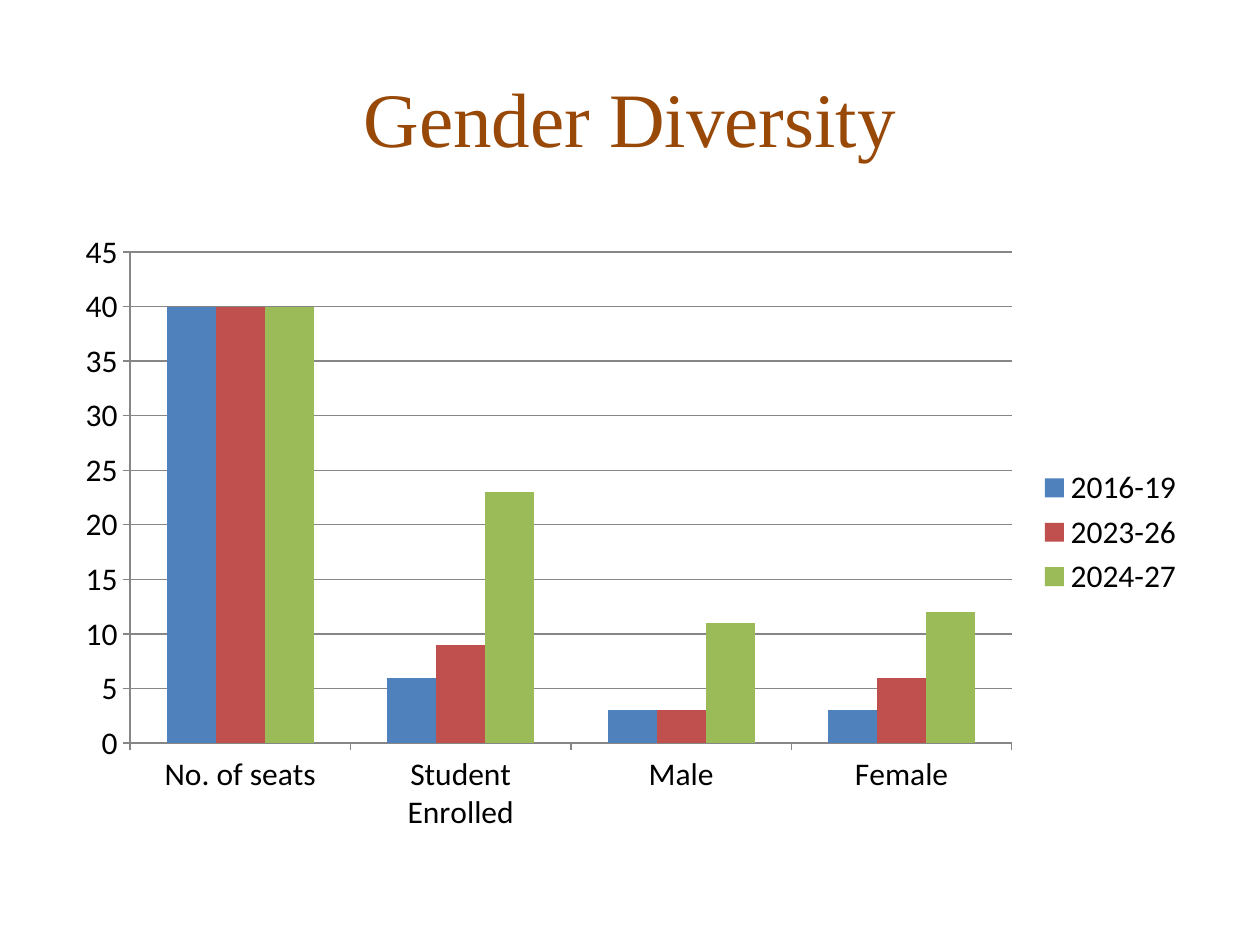
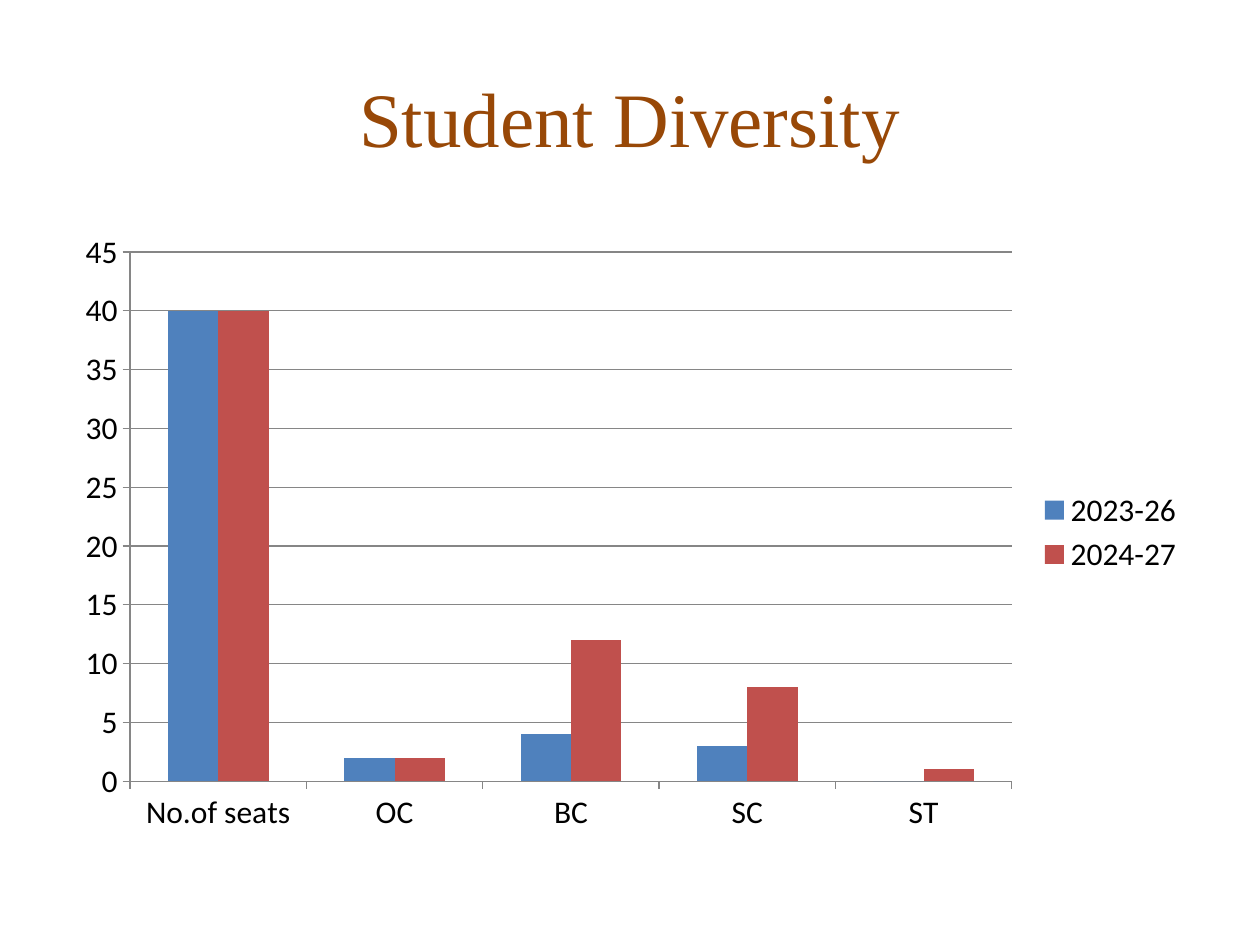
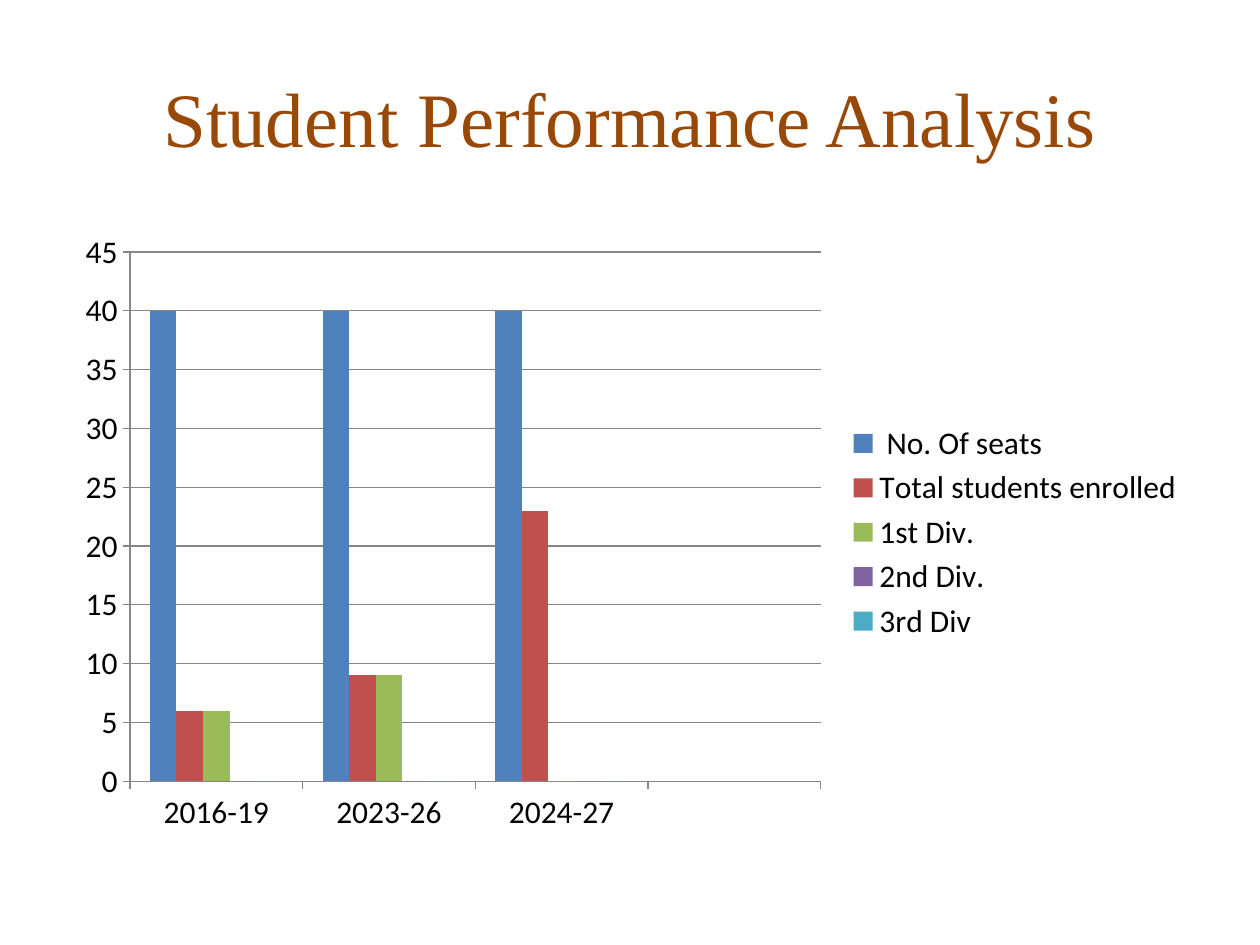
"""Build three slides of column charts on student diversity and performance."""
from dataclasses import dataclass

from pptx import Presentation
from pptx.chart.data import CategoryChartData
from pptx.dml.color import RGBColor
from pptx.enum.chart import XL_CHART_TYPE, XL_LEGEND_POSITION, XL_TICK_MARK
from pptx.enum.text import MSO_ANCHOR, PP_ALIGN
from pptx.util import Pt

CLUSTERED = XL_CHART_TYPE.COLUMN_CLUSTERED
LEGEND_RIGHT = XL_LEGEND_POSITION.RIGHT
TICK_OUTSIDE = XL_TICK_MARK.OUTSIDE
MIDDLE = MSO_ANCHOR.MIDDLE
CENTER = PP_ALIGN.CENTER

SLIDE_WIDTH, SLIDE_HEIGHT = 720, 540
MARGIN = 36
CONTENT_WIDTH = SLIDE_WIDTH - 2 * MARGIN
TITLE_TOP, TITLE_HEIGHT = 21.6, 90
CHART_TOP, CHART_HEIGHT = 126, 356.4


@dataclass(frozen=True)
class Theme:
    """Colours, fonts and type sizes of the slides."""
    background: str = "FFFFFF"
    title_color: str = "984807"
    title_font: str = "Times New Roman"
    title_size: float = 44
    chart_color: str = "000000"
    chart_font: str = "Calibri"
    chart_size: float = 18
    line_color: str = "868686"
    line_width: float = 0.75
    series_colors: tuple = ("4F81BD", "C0504D", "9BBB59", "8064A2", "4BACC6")


CHART_SLIDES = [
    ("Gender Diversity",
     ["No. of seats", "Student Enrolled", "Male", "Female"],
     {"2016-19": [40, 6, 3, 3],
      "2023-26": [40, 9, 3, 6],
      "2024-27": [40, 23, 11, 12]}),
    ("Student Diversity",
     ["No.of seats", "OC", "BC", "SC", "ST"],
     {"2023-26": [40, 2, 4, 3, 0],
      "2024-27": [40, 2, 12, 8, 1]}),
    ("Student Performance Analysis",
     ["2016-19", "2023-26", "2024-27", ""],
     {" No. Of seats": [40, 40, 40, None],
      "Total students enrolled": [6, 9, 23, None],
      "1st Div.": [6, 9, 0, None],
      "2nd Div.": [0, 0, 0, None],
      "3rd Div": [0, 0, 0, None]}),
]


class Deck:
    """Hold the style and the current slide, and draw its elements."""

    def __init__(self, theme):
        """Start an empty presentation of the right size."""
        self.theme = theme
        self.presentation = Presentation()
        self.presentation.slide_width = Pt(SLIDE_WIDTH)
        self.presentation.slide_height = Pt(SLIDE_HEIGHT)
        self.slide = None

    def add_slide(self):
        """Add a blank slide and make it the current one."""
        self.slide = self.presentation.slides.add_slide(self.presentation.slide_layouts[6])
        fill = self.slide.background.fill
        fill.solid()
        fill.fore_color.rgb = RGBColor.from_string(self.theme.background)

    def style_font(self, font, name, size, color):
        """Set the typeface, size and colour of a font."""
        font.name = name
        font.size = Pt(size)
        font.color.rgb = RGBColor.from_string(color)

    def add_title(self, text):
        """Add the centred title."""
        theme = self.theme
        shape = self.slide.shapes.add_textbox(
            Pt(MARGIN), Pt(TITLE_TOP), Pt(CONTENT_WIDTH), Pt(TITLE_HEIGHT))
        text_frame = shape.text_frame
        text_frame.word_wrap = True
        text_frame.vertical_anchor = MIDDLE
        text_frame.text = text
        paragraph = text_frame.paragraphs[0]
        paragraph.alignment = CENTER
        self.style_font(paragraph.runs[0].font, theme.title_font,
                        theme.title_size, theme.title_color)

    def style_line(self, line):
        """Give a chart line its colour and width."""
        line.color.rgb = RGBColor.from_string(self.theme.line_color)
        line.width = Pt(self.theme.line_width)

    def add_column_chart(self, categories, series_values):
        """Add a clustered column chart with a legend on the right."""
        theme = self.theme
        chart_data = CategoryChartData()
        chart_data.categories = categories
        for name, values in series_values.items():
            chart_data.add_series(name, values)
        chart = self.slide.shapes.add_chart(
            CLUSTERED, Pt(MARGIN), Pt(CHART_TOP), Pt(CONTENT_WIDTH),
            Pt(CHART_HEIGHT), chart_data).chart
        self.style_font(chart.font, theme.chart_font, theme.chart_size, theme.chart_color)
        chart.has_title = False
        chart.has_legend = True
        chart.legend.position = LEGEND_RIGHT
        chart.legend.include_in_layout = False
        for axis in (chart.category_axis, chart.value_axis):
            axis.major_tick_mark = TICK_OUTSIDE
            self.style_line(axis.format.line)
        chart.value_axis.has_major_gridlines = True
        self.style_line(chart.value_axis.major_gridlines.format.line)
        plot = chart.plots[0]
        plot.vary_by_categories = False
        plot.gap_width = 150
        for series, color in zip(plot.series, theme.series_colors):
            series.format.fill.solid()
            series.format.fill.fore_color.rgb = RGBColor.from_string(color)


def main():
    """Build and save the slides."""
    deck = Deck(Theme())
    for title, categories, series_values in CHART_SLIDES:
        deck.add_slide()
        deck.add_title(title)
        deck.add_column_chart(categories, series_values)
    deck.presentation.save("out.pptx")


if __name__ == "__main__":
    main()
